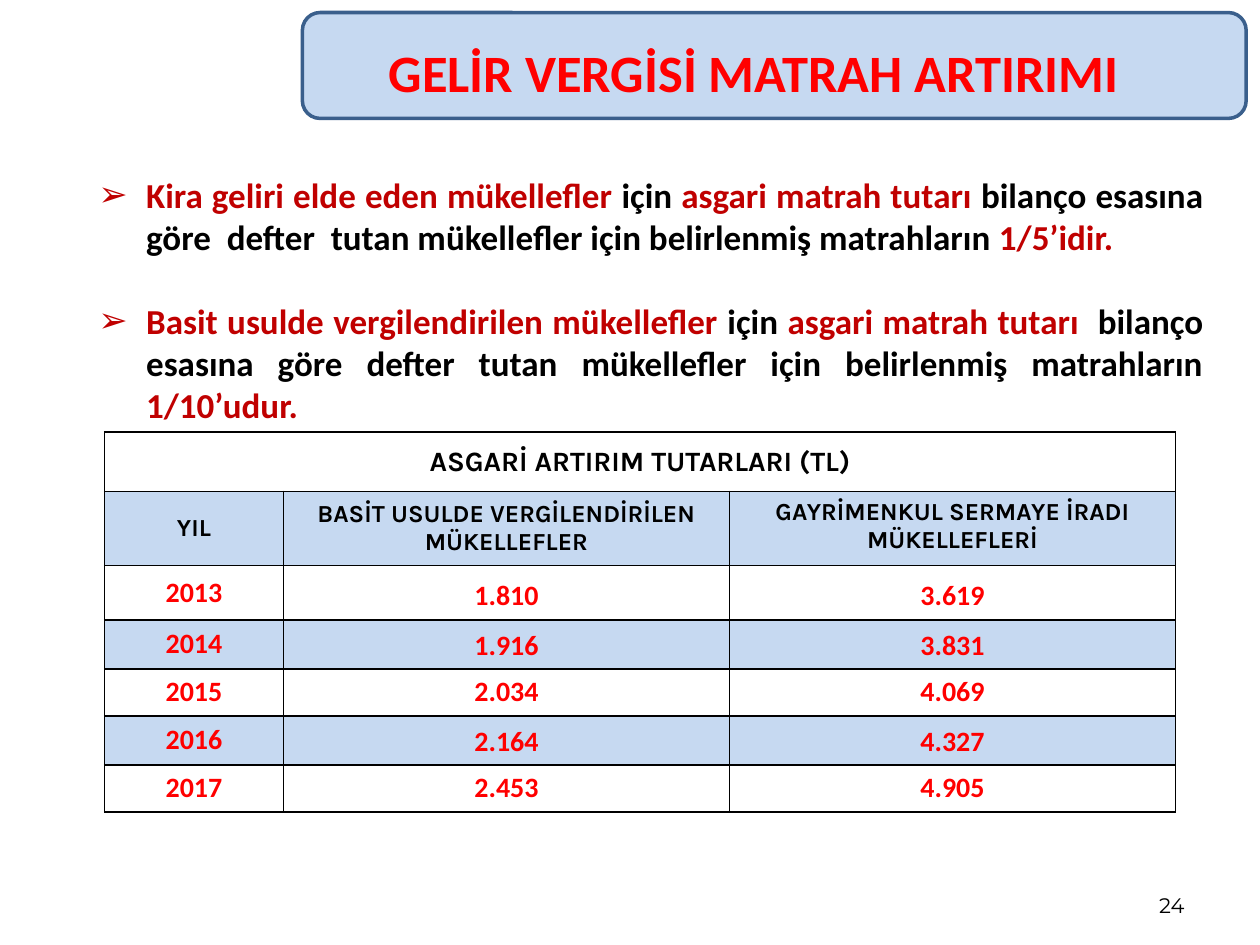
from dataclasses import dataclass

from lxml.etree import SubElement
from pptx import Presentation
from pptx.dml.color import RGBColor
from pptx.enum.shapes import MSO_SHAPE
from pptx.enum.text import MSO_ANCHOR, MSO_AUTO_SIZE, PP_ALIGN
from pptx.oxml.ns import qn
from pptx.util import Inches, Pt


@dataclass(frozen=True)
class Theme:
    red: RGBColor = RGBColor(0xFF, 0x00, 0x00)
    dark_red: RGBColor = RGBColor(0xC0, 0x00, 0x00)
    black: RGBColor = RGBColor(0x00, 0x00, 0x00)
    light_blue: RGBColor = RGBColor(0xC6, 0xD9, 0xF1)
    outline_blue: RGBColor = RGBColor(0x3A, 0x5F, 0x8C)
    title_size: Pt = Pt(30)
    body_size: Pt = Pt(20)
    table_size: Pt = Pt(16)
    header_size: Pt = Pt(14)
    number_size: Pt = Pt(12)


theme = Theme()


def add_run(paragraph, text, name, size, color, bold=True):
    run = paragraph.add_run()
    run.text = text
    run.font.color.rgb = color
    for attribute, value in {"name": name, "size": size, "bold": bold}.items():
        setattr(run.font, attribute, value)


def add_borders(cell):
    properties = cell._tc.get_or_add_tcPr()
    for side in ("lnL", "lnR", "lnT", "lnB"):
        line = SubElement(properties, qn(f"a:{side}"), w=str(Pt(1)))
        fill = SubElement(line, qn("a:solidFill"))
        SubElement(fill, qn("a:srgbClr"), val=str(theme.black))


presentation = Presentation()
presentation.slide_width = Inches(10)
presentation.slide_height = Inches(7.5)
slide = presentation.slides.add_slide(presentation.slide_layouts[1])
title, body = slide.shapes.title, slide.placeholders[1]

# Banner, placed behind the title
banner = slide.shapes.add_shape(
    MSO_SHAPE.ROUNDED_RECTANGLE, Inches(2.4), Inches(0.1), Inches(7.49), Inches(0.84)
)
banner.shadow.inherit = False
banner.fill.solid()
banner.fill.fore_color.rgb = theme.light_blue
banner.line.color.rgb = theme.outline_blue
banner.line.width = Pt(2)
slide.shapes._spTree.insert(2, banner._element)

# Title, body and slide number frames
number = slide.shapes.add_textbox(0, 0, 0, 0)
frames = [
    (title, (2.64, 0.21, 6.69, 0.71), MSO_ANCHOR.MIDDLE),
    (body, (0.2, 1.32, 9.45, 2.12), MSO_ANCHOR.MIDDLE),
    (number, (7.17, 6.83, 2.33, 0.5), MSO_ANCHOR.BOTTOM),
]
for shape, box, anchor in frames:
    for attribute, value in zip(("left", "top", "width", "height"), box):
        setattr(shape, attribute, Inches(value))
    frame_format = {
        "word_wrap": True,
        "auto_size": MSO_AUTO_SIZE.NONE,
        "vertical_anchor": anchor,
    }
    for attribute, value in frame_format.items():
        setattr(shape.text_frame, attribute, value)

paragraph = title.text_frame.paragraphs[0]
paragraph.alignment = PP_ALIGN.CENTER
add_run(paragraph, "GELİR VERGİSİ MATRAH ARTIRIMI", "Calibri", theme.title_size, theme.red)

paragraph = number.text_frame.paragraphs[0]
paragraph.alignment = PP_ALIGN.RIGHT
add_run(paragraph, "24", "Montserrat", theme.number_size, theme.black, bold=False)

# Bulleted rules: runs alternate between dark red and black
rules = [
    [
        "Kira geliri elde eden mükellefler ",
        "için ",
        "asgari matrah tutarı ",
        "bilanço esasına göre  defter  tutan mükellefler için belirlenmiş matrahların ",
        "1/5’idir.",
    ],
    [
        "Basit usulde vergilendirilen mükellefler ",
        "için ",
        "asgari matrah tutarı  ",
        "bilanço esasına göre defter tutan mükellefler için belirlenmiş matrahların ",
        "1/10’udur.",
    ],
]
for index, parts in enumerate(rules):
    paragraph = body.text_frame.add_paragraph() if index else body.text_frame.paragraphs[0]
    paragraph_format = {
        "level": 1,
        "alignment": PP_ALIGN.JUSTIFY,
        "space_before": Pt(24) if index else Pt(0),
    }
    for attribute, value in paragraph_format.items():
        setattr(paragraph, attribute, value)
    properties = paragraph._p.get_or_add_pPr()
    properties.set("marL", str(Inches(0.86)))
    properties.set("indent", str(Inches(-0.38)))
    SubElement(properties, qn("a:buChar"), char="➢")
    for position, text in enumerate(parts):
        color = theme.black if position % 2 else theme.dark_red
        add_run(paragraph, text, "Calibri", theme.body_size, color)

# Table of minimum amounts
rows = [
    ["ASGARİ ARTIRIM TUTARLARI (TL)", "", ""],
    ["YIL", "BASİT USULDE VERGİLENDİRİLEN MÜKELLEFLER", "GAYRİMENKUL SERMAYE İRADI MÜKELLEFLERİ"],
    ["2013", "1.810", "3.619"],
    ["2014", "1.916", "3.831"],
    ["2015", "2.034", "4.069"],
    ["2016", "2.164", "4.327"],
    ["2017", "2.453", "4.905"],
]
column_widths = [1.42, 3.54, 3.54]
row_heights = [0.47, 0.59, 0.43, 0.39, 0.37, 0.39, 0.37]
table = slide.shapes.add_table(
    len(rows), len(column_widths), Inches(0.83), Inches(3.43),
    Inches(sum(column_widths)), Inches(sum(row_heights)),
).table
table.first_row = table.horz_banding = False
for column, width in zip(table.columns, column_widths):
    column.width = Inches(width)
for row, height in zip(table.rows, row_heights):
    row.height = Inches(height)
table.cell(0, 0).merge(table.cell(0, 2))

header_styles = [
    ("Karla", theme.table_size, theme.black),
    ("Karla", theme.header_size, theme.black),
]
value_style = ("Calibri", theme.table_size, theme.red)
for row_index, texts in enumerate(rows):
    style = header_styles[row_index] if row_index < 2 else value_style
    for column_index, text in enumerate(texts):
        cell = table.cell(row_index, column_index)
        add_borders(cell)
        if row_index % 2:
            cell.fill.solid()
            cell.fill.fore_color.rgb = theme.light_blue
        else:
            cell.fill.background()
        if row_index >= 2 and column_index:
            cell.vertical_anchor = MSO_ANCHOR.BOTTOM
        elif (row_index, column_index) == (1, 2):
            cell.vertical_anchor = MSO_ANCHOR.TOP
        else:
            cell.vertical_anchor = MSO_ANCHOR.MIDDLE
        if text:
            paragraph = cell.text_frame.paragraphs[0]
            paragraph.alignment = PP_ALIGN.CENTER
            add_run(paragraph, text, *style)

presentation.save("out.pptx")
